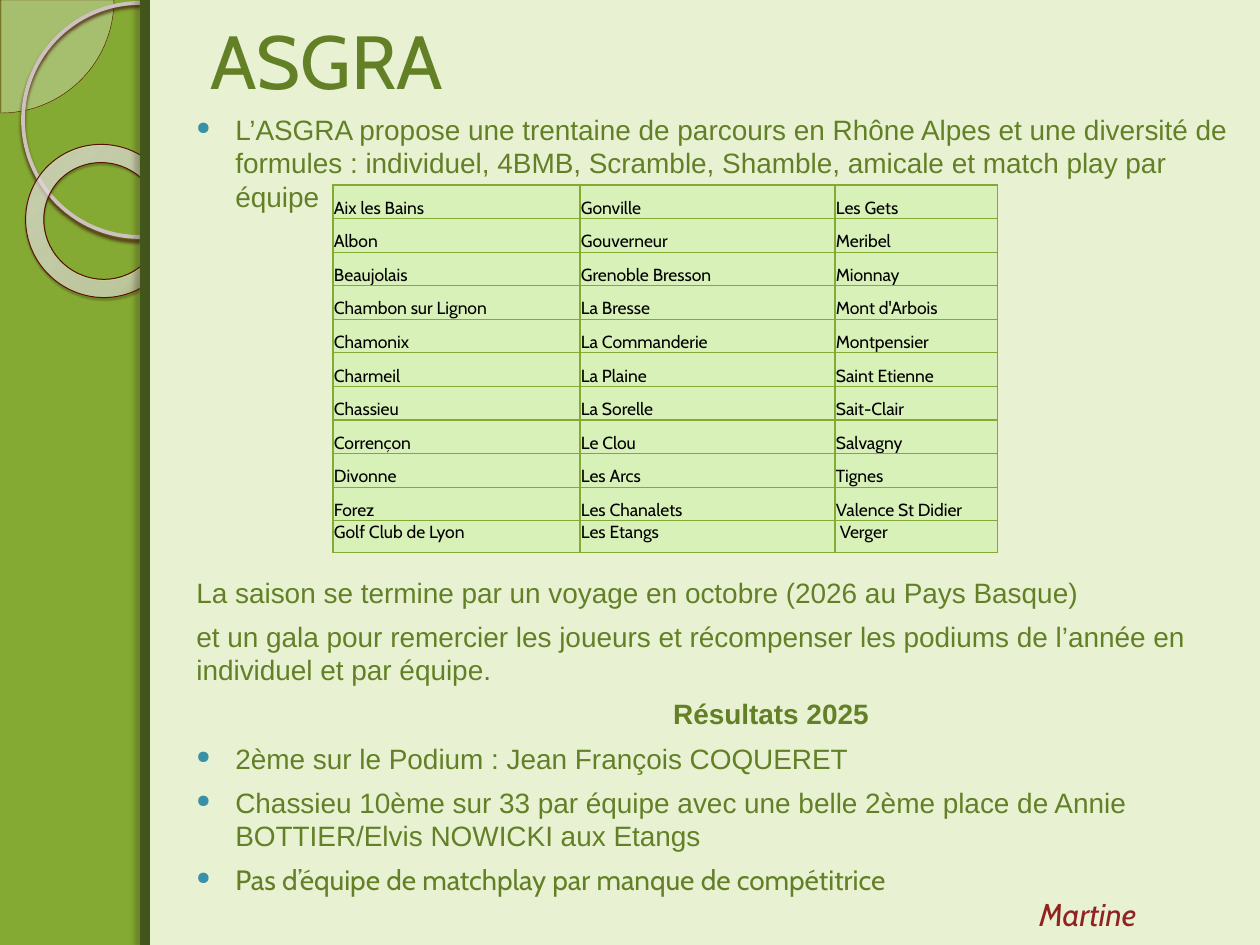
"""Build the ASGRA golf season slide."""
from lxml import etree
from pptx import Presentation
from pptx.dml.color import RGBColor
from pptx.enum.shapes import MSO_SHAPE
from pptx.enum.text import MSO_ANCHOR, MSO_AUTO_SIZE, PP_ALIGN
from pptx.oxml.ns import qn
from pptx.util import Pt

PIE, OVAL, RING, RECT = (MSO_SHAPE.PIE, MSO_SHAPE.OVAL, MSO_SHAPE.DONUT,
                         MSO_SHAPE.RECTANGLE)
TOP, MIDDLE, BOTTOM = MSO_ANCHOR.TOP, MSO_ANCHOR.MIDDLE, MSO_ANCHOR.BOTTOM
LEFT, CENTER = PP_ALIGN.LEFT, PP_ALIGN.CENTER
FIXED = MSO_AUTO_SIZE.NONE
SCALE = 914400 // 126
GREEN, INK, PALE, CELL = "84AA33", "638026", "E8F2D3", "D8F1B8"

GLOW = {"path": "circle", "to": {"l": -408, "t": -50, "r": 508, "b": 150},
        "stops": [(0, "F4F2F2", 70), (70, "F9F8F8", 55), (100, "5E1400", 60)]}
DECOR = [
    {"kind": PIE, "box": (-112, -113, 226, 226), "adj": (0, 54),
     "fill": "ECEAE9", "alpha": 33, "line": ("591502", 0.25)},
    {"kind": OVAL, "box": (23, 3, 234, 234), "line": ("CEC2C0", 2.15),
     "shade": ("44170B", 85, 2, 2, 90)},
    {"kind": RING, "box": (25, 145, 155, 152), "adj": (0.12,), "turn": 38.6,
     "glow": GLOW, "line": ("561200", 0.58),
     "shade": ("260901", 35, 1, 1.2, 75)},
    {"kind": RECT, "box": (140, 0, 1120, 945), "fill": PALE},
    {"kind": RECT, "box": (140, 0, 10, 945), "fill": "42551A",
     "shade": ("29130D", 25, 3, 3, 180)},
]

TITLE = ("ASGRA", {"name": "Cabin", "size": Pt(43), "color": INK})
SIGN = ("Martine", {"name": "Cabin", "size": Pt(18), "color": "922222",
                    "italic": True})
BASE = {"name": "Arial", "size": Pt(16), "color": INK}
BODY = [
    {"text": "L’ASGRA propose une trentaine de parcours en Rhône Alpes et une "
             "diversité de formules : individuel, 4BMB, Scramble, Shamble, "
             "amicale et match play par équipe", "dot": True, "gap": 0},
    {"text": "La saison se termine par un voyage en octobre "
             "(2026 au Pays Basque)", "gap": 207},
    {"text": "et un gala pour remercier les joueurs et récompenser les podiums "
             "de l’année en individuel et par équipe."},
    {"text": "Résultats 2025", "left": 98, "align": CENTER,
     "font": {"bold": True}},
    {"text": "2ème sur le Podium : Jean François COQUERET", "dot": True},
    {"text": "Chassieu 10ème sur 33 par équipe avec une belle 2ème place de "
             "Annie BOTTIER/Elvis NOWICKI aux Etangs", "dot": True},
    {"text": "Pas d’équipe de matchplay par manque de compétitrice",
     "dot": True, "font": {"name": "Cabin"}},
]

CLUBS = [
    ("Aix les Bains", "Gonville", "Les Gets"),
    ("Albon", "Gouverneur", "Meribel"),
    ("Beaujolais", "Grenoble Bresson", "Mionnay"),
    ("Chambon sur Lignon", "La Bresse", "Mont d'Arbois"),
    ("Chamonix", "La Commanderie", "Montpensier"),
    ("Charmeil", "La Plaine", "Saint Etienne"),
    ("Chassieu", "La Sorelle", "Sait-Clair"),
    ("Corrençon", "Le Clou", "Salvagny"),
    ("Divonne", "Les Arcs", "Tignes"),
    ("Forez", "Les Chanalets", "Valence St Didier"),
    ("Golf Club de Lyon", "Les Etangs", " Verger"),
]
COLS = (247, 255, 163)
ROWS, LAST = 336, 32
CLUB = {"name": "Cabin", "size": Pt(10), "color": "000000"}


def px(n):
    return n * SCALE


def rgb(code):
    return RGBColor.from_string(code)


def sub(node, tag, **attrs):
    return etree.SubElement(node, qn("a:" + tag),
                            {k: str(v) for k, v in attrs.items()})


def tint(node, code, alpha=None):
    color = sub(node, "srgbClr", val=code)
    if alpha:
        sub(color, "alpha", val=alpha * 1000)


def style(para, text, font):
    run = para.add_run()
    run.text = text
    for key, val in font.items():
        if key == "color":
            run.font.color.rgb = rgb(val)
        else:
            setattr(run.font, key, val)


def place(item, box):
    for key, val in zip(("left", "top", "width", "height"), box):
        setattr(item, key, px(val))


def decor(slide, part):
    shape = slide.shapes.add_shape(part["kind"], *map(px, part["box"]))
    shape.shadow.inherit = False
    shape.rotation = part.get("turn", 0)
    for i, val in enumerate(part.get("adj", ())):
        shape.adjustments[i] = val
    props = shape._element.spPr
    if "fill" in part or "glow" in part:
        shape.fill.solid()
        shape.fill.fore_color.rgb = rgb(part.get("fill", PALE))
        solid = props.find(qn("a:solidFill"))
        if "alpha" in part:
            sub(solid[0], "alpha", val=part["alpha"] * 1000)
        if "glow" in part:
            glow = part["glow"]
            grad = etree.Element(qn("a:gradFill"))
            stops = sub(grad, "gsLst")
            for pos, code, alpha in glow["stops"]:
                tint(sub(stops, "gs", pos=pos * 1000), code, alpha)
            sub(sub(grad, "path", path=glow["path"]), "fillToRect",
                **{k: v * 1000 for k, v in glow["to"].items()})
            props.replace(solid, grad)
    else:
        shape.fill.background()
    if "line" in part:
        code, wide = part["line"]
        shape.line.color.rgb = rgb(code)
        shape.line.width = Pt(wide)
    else:
        shape.line.fill.background()
    if "shade" in part:
        code, alpha, blur, dist, turn = part["shade"]
        cast = sub(props.find(qn("a:effectLst")), "outerShdw",
                   blurRad=Pt(blur), dist=Pt(dist), dir=turn * 60000,
                   algn="tl", rotWithShape=0)
        tint(cast, code, alpha)


def body(slide):
    frame = slide.shapes.add_textbox(*map(px, (184, 106, 1076, 814))).text_frame
    frame.word_wrap = True
    for i, item in enumerate(BODY):
        para = frame.add_paragraph() if i else frame.paragraphs[0]
        dot = item.get("dot")
        props = para._p.get_or_add_pPr()
        props.set("marL", str(px(39 if dot else item.get("left", 0))))
        props.set("indent", str(px(-39 if dot else 0)))
        if dot:
            tint(sub(props, "buClr"), "3891A7")
            sub(props, "buSzPct", val=64000)
            sub(props, "buChar", char="●")
        para.alignment = item.get("align", LEFT)
        para.space_before = Pt(item.get("gap", 6))
        style(para, item["text"], BASE | item.get("font", {}))


def clubs(slide):
    last = len(CLUBS) - 1
    box = (333, 185, sum(COLS), ROWS + LAST)
    table = slide.shapes.add_table(len(CLUBS), len(COLS), *map(px, box)).table
    table.first_row = table.horz_banding = False
    for col, wide in zip(table.columns, COLS):
        col.width = px(wide)
    for r, names in enumerate(CLUBS):
        table.rows[r].height = px(LAST) if r == last else px(ROWS) // last
        for c, name in enumerate(names):
            cell = table.cell(r, c)
            form = {"margin_left": px(1), "margin_right": px(1),
                    "margin_top": px(1), "margin_bottom": 0,
                    "vertical_anchor": TOP if r == last else BOTTOM}
            for key, val in form.items():
                setattr(cell, key, val)
            props = cell._tc.get_or_add_tcPr()
            for side in ("lnL", "lnR", "lnT", "lnB"):
                edge = sub(props, side, w=Pt(0.75))
                tint(sub(edge, "solidFill"), GREEN)
            cell.fill.solid()
            cell.fill.fore_color.rgb = rgb(CELL)
            style(cell.text_frame.paragraphs[0], name, CLUB)


def main():
    deck = Presentation()
    deck.slide_width, deck.slide_height = px(1260), px(945)
    slide = deck.slides.add_slide(deck.slide_layouts[5])
    back = slide.background.fill
    back.solid()
    back.fore_color.rgb = rgb(GREEN)
    for part in DECOR:
        decor(slide, part)
    title = slide.shapes.title
    slide.shapes._spTree.append(title._element)
    place(title, (198, 3, 1033, 113))
    frame = title.text_frame
    frame.auto_size = FIXED
    frame.vertical_anchor = MIDDLE
    frame.paragraphs[0].alignment = LEFT
    style(frame.paragraphs[0], *TITLE)
    sign = slide.shapes.add_textbox(*map(px, (1027, 889, 233, 50))).text_frame
    sign.word_wrap = True
    style(sign.paragraphs[0], *SIGN)
    body(slide)
    clubs(slide)
    deck.save("out.pptx")


if __name__ == "__main__":
    main()
